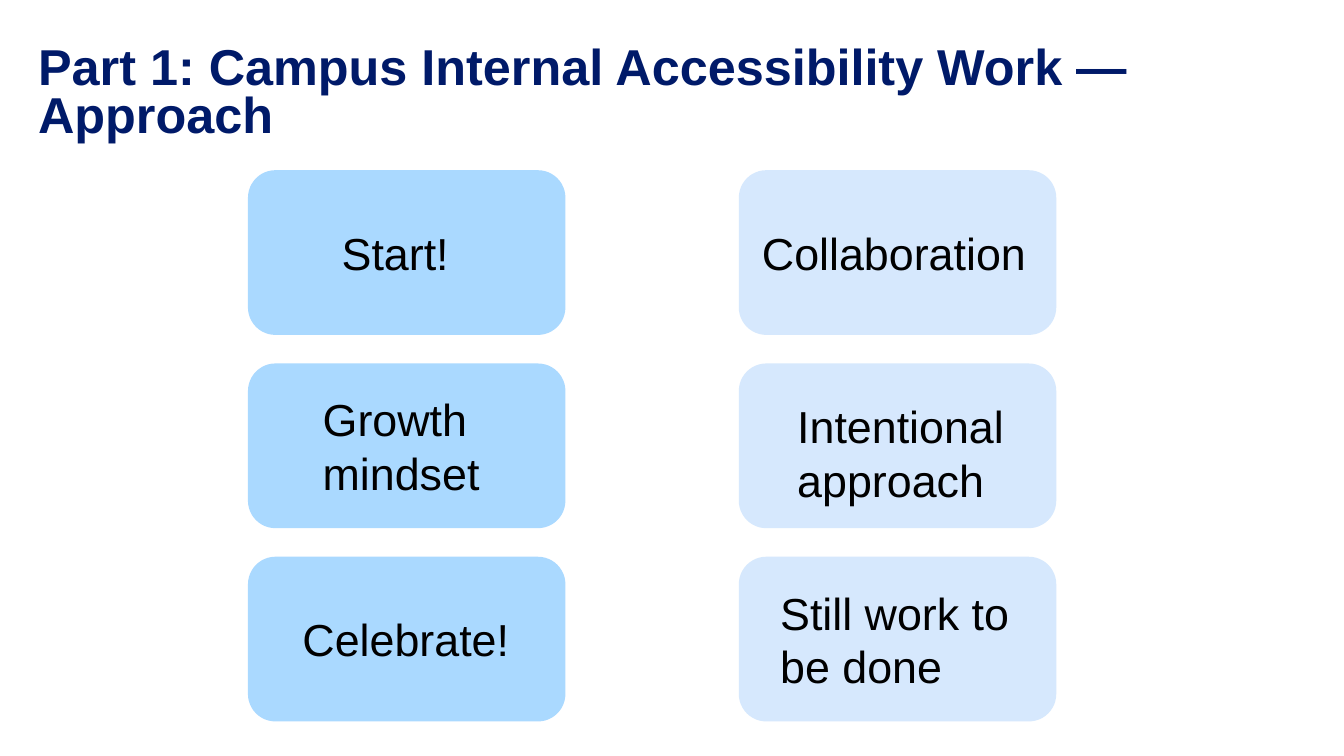
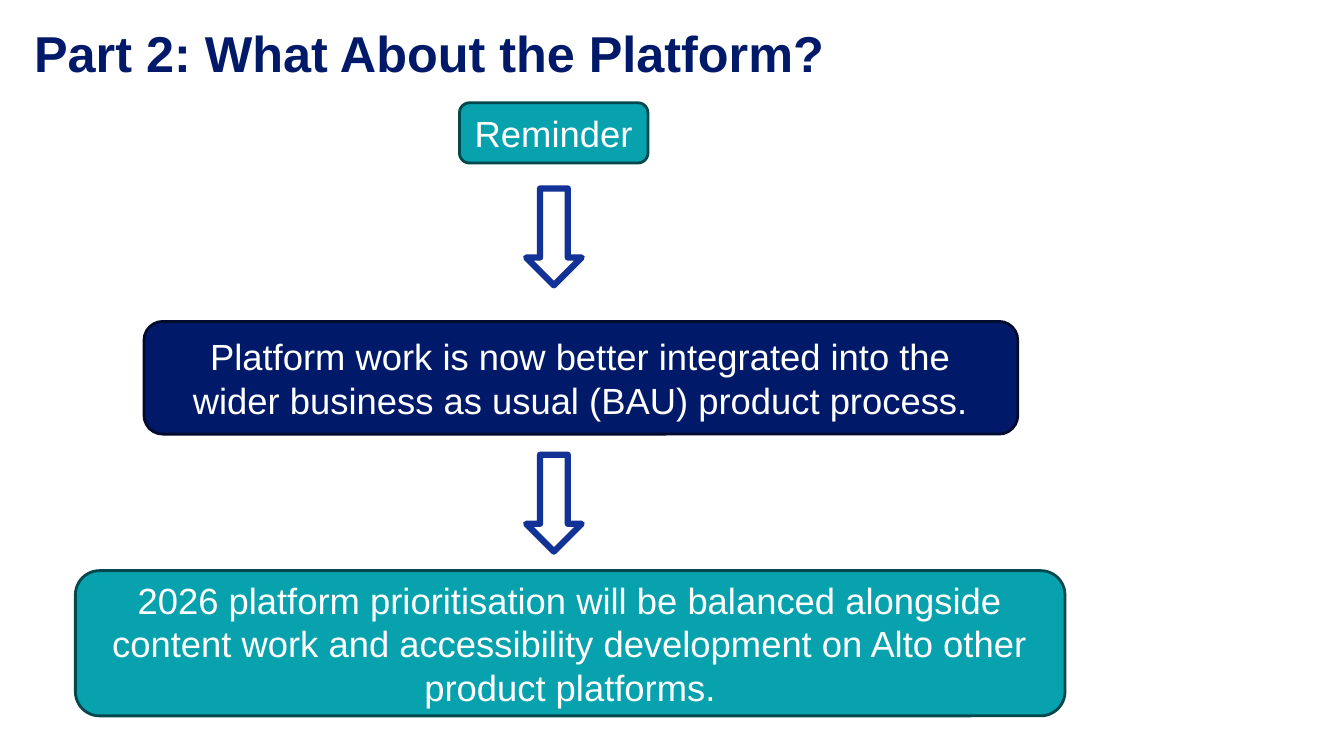
from dataclasses import dataclass

from pptx import Presentation
from pptx.dml.color import RGBColor
from pptx.enum.shapes import MSO_SHAPE
from pptx.enum.text import MSO_ANCHOR, MSO_AUTO_SIZE, PP_ALIGN
from pptx.util import Cm, Pt

ROUND, DOWN = MSO_SHAPE.ROUNDED_RECTANGLE, MSO_SHAPE.DOWN_ARROW
LEFT, CENTER = PP_ALIGN.LEFT, PP_ALIGN.CENTER
TOP, MIDDLE = MSO_ANCHOR.TOP, MSO_ANCHOR.MIDDLE
NO_FIT = MSO_AUTO_SIZE.NONE
TITLE_ONLY = 5


@dataclass(frozen=True)
class Theme:
    font: str = "Arial"
    navy: str = "001A69"
    navy_edge: str = "000B2E"
    teal: str = "08A2AE"
    teal_edge: str = "04474C"
    arrow: str = "133296"
    sky: str = "AAD9FF"
    pale: str = "D6E8FD"
    black: str = "000000"
    white: str = "FFFFFF"
    title_size: float = 36
    card_size: float = 32
    step_size: float = 26


def write(tf, text, *, theme, size, color, bold=False, align=LEFT,
          anchor=MIDDLE, spacing=None, margins=(0.25, 0.13, 0.25, 0.13)):
    """Fill a text frame; margins are left, top, right, bottom in cm."""
    tf.word_wrap = True
    tf.auto_size = NO_FIT
    tf.vertical_anchor = anchor
    (tf.margin_left, tf.margin_top,
     tf.margin_right, tf.margin_bottom) = (Cm(m) for m in margins)
    p = tf.paragraphs[0]
    p.alignment = align
    if spacing:
        p.line_spacing = spacing
    r = p.add_run()
    r.text = text
    r.font.name, r.font.size, r.font.bold = theme.font, Pt(size), bold
    r.font.color.rgb = RGBColor.from_string(color)


class Deck:
    def __init__(self, prs, theme):
        self.prs, self.theme, self.slide = prs, theme, None

    def new_slide(self, title, left, top, height):
        self.slide = self.prs.slides.add_slide(self.prs.slide_layouts[TITLE_ONLY])
        sp = self.slide.shapes.title
        sp.left, sp.top, sp.width, sp.height = Cm(left), Cm(top), Cm(31.2), Cm(height)
        t = self.theme
        write(sp.text_frame, title, theme=t, size=t.title_size, color=t.navy,
              bold=True, anchor=TOP, spacing=0.8, margins=(0.15,) * 4)

    def shape(self, kind, left, top, width, height, fill=None, line=None, weight=2):
        sp = self.slide.shapes.add_shape(kind, Cm(left), Cm(top), Cm(width), Cm(height))
        sp.shadow.inherit = False
        if fill:
            sp.fill.solid()
            sp.fill.fore_color.rgb = RGBColor.from_string(fill)
        else:
            sp.fill.background()
        if line:
            sp.line.color.rgb = RGBColor.from_string(line)
            sp.line.width = Pt(weight)
        else:
            sp.line.fill.background()
        return sp

    def card(self, text, left, top, fill, indent, drop):
        sp = self.shape(ROUND, left, top, 8, 4.15, fill)
        t = self.theme
        write(sp.text_frame, text, theme=t, size=t.card_size, color=t.black,
              margins=(indent, drop, 0.3, 0))

    def step(self, text, left, top, width, height, fill, edge, side=0.25):
        sp = self.shape(ROUND, left, top, width, height, fill, edge)
        t = self.theme
        write(sp.text_frame, text, theme=t, size=t.step_size, color=t.white,
              align=CENTER, margins=(side, 0.13, side, 0.13))

    def arrow(self, top):
        self.shape(DOWN, 13.26, top, 1.4, 2.44, line=self.theme.arrow, weight=4.5)


def approach_slide(deck):
    t = deck.theme
    deck.new_slide("Part 1: Campus Internal Accessibility Work — Approach", 0.81, 1.02, 2.74)
    # Two columns of cards: text, left indent, extra space above
    columns = [
        (6.25, t.sky, [("Start!", 2.16, 0), ("Growth mindset", 1.68, 0),
                       ("Celebrate!", 1.17, 0)]),
        (18.62, t.pale, [("Collaboration", 0.38, 0), ("Intentional approach", 1.27, 0.36),
                         ("Still work to be done", 0.84, 0)]),
    ]
    for left, fill, cards in columns:
        for row, (text, indent, drop) in enumerate(cards):
            deck.card(text, left, 4.29 + row * 4.87, fill, indent, drop)


def platform_slide(deck):
    t = deck.theme
    deck.new_slide("Part 2: What About the Platform?", 0.71, 0.71, 1.52)
    # Steps from top to bottom
    deck.step("Reminder", 11.58, 2.59, 4.75, 1.52, t.teal, t.teal_edge)
    deck.step("Platform work is now better integrated into the wider business "
              "as usual (BAU) product process.",
              3.63, 8.1, 22.02, 2.84, t.navy, t.navy_edge, side=0.7)
    deck.step("2026 platform prioritisation will be balanced alongside content work "
              "and accessibility development on Alto other product platforms.",
              1.9, 14.38, 24.94, 3.66, t.teal, t.teal_edge)
    # Arrows between the steps
    for top in (4.75, 11.46):
        deck.arrow(top)


def main():
    prs = Presentation()
    prs.slide_width, prs.slide_height = Cm(33.87), Cm(19.05)
    deck = Deck(prs, Theme())
    approach_slide(deck)
    platform_slide(deck)
    prs.save("out.pptx")


if __name__ == "__main__":
    main()
